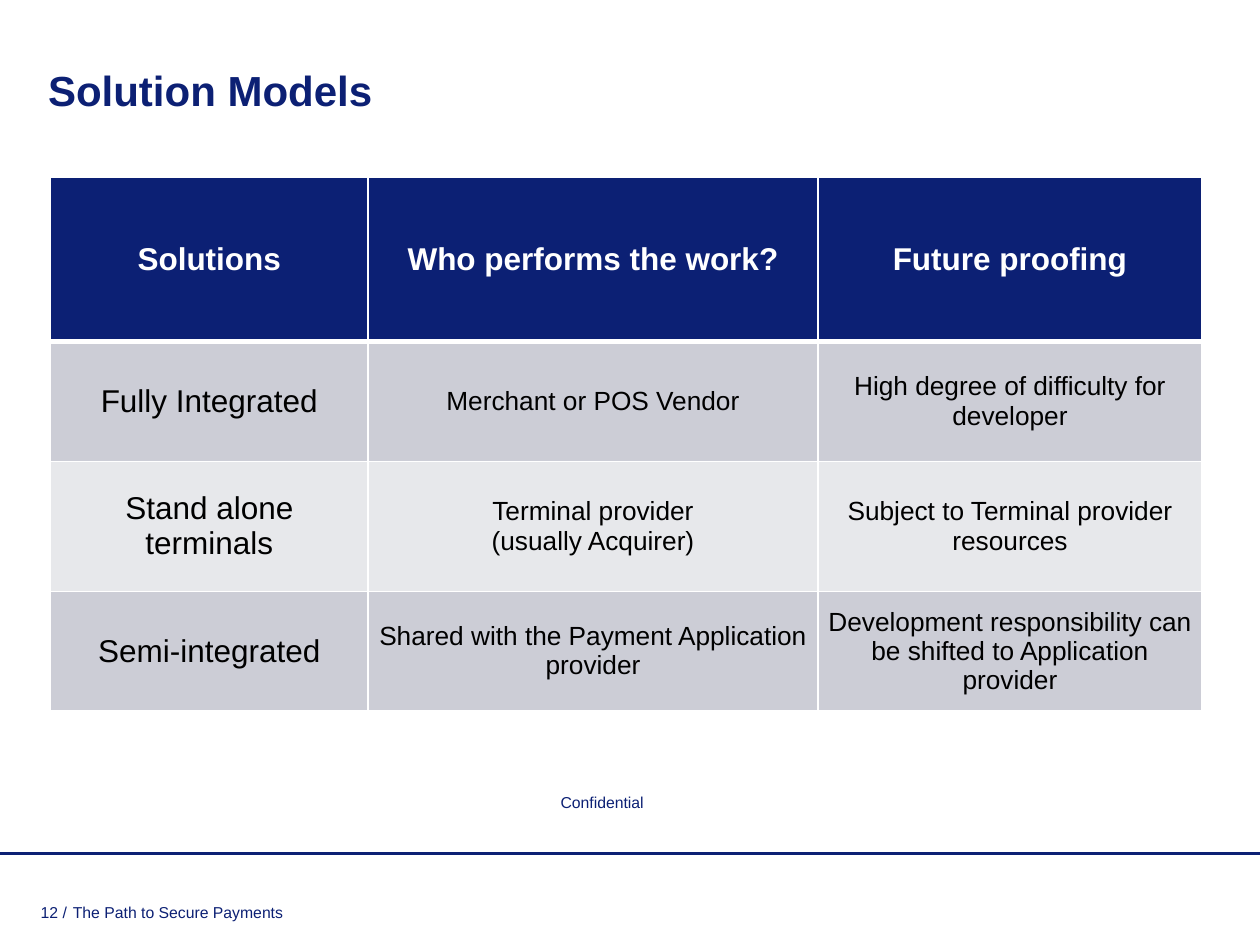
from lxml import etree
from pptx import Presentation
from pptx.dml.color import RGBColor
from pptx.enum.shapes import MSO_CONNECTOR
from pptx.enum.text import MSO_ANCHOR, PP_ALIGN
from pptx.oxml.ns import qn
from pptx.util import Cm, Pt

STRAIGHT = MSO_CONNECTOR.STRAIGHT
MIDDLE, BOTTOM = MSO_ANCHOR.MIDDLE, MSO_ANCHOR.BOTTOM
LEFT, CENTER, RIGHT = PP_ALIGN.LEFT, PP_ALIGN.CENTER, PP_ALIGN.RIGHT

COLORS = {"navy": "0C2074", "white": "FFFFFF", "black": "000000",
          "band_dark": "CCCDD6", "band_light": "E7E8EB"}


def style_text(frame, size, color, bold=False, align=LEFT):
    for paragraph in frame.paragraphs:
        paragraph.alignment = align
        paragraph.font.name = "Arial"
        paragraph.font.size = Pt(size)
        paragraph.font.bold = bold
        paragraph.font.color.rgb = RGBColor.from_string(COLORS[color])


def add_label(text, left, top, width, height, size, anchor=BOTTOM,
              wrap=True, bold=False, align=LEFT):
    frame = slide.shapes.add_textbox(Cm(left), Cm(top), Cm(width), Cm(height)).text_frame
    frame.margin_left = frame.margin_right = frame.margin_top = frame.margin_bottom = 0
    frame.word_wrap = wrap
    frame.vertical_anchor = anchor
    frame.text = text
    style_text(frame, size, "navy", bold, align)


prs = Presentation()
prs.slide_width, prs.slide_height = Cm(25.4), Cm(19.05)
slide = prs.slides.add_slide(prs.slide_layouts[6])

# Footer rule
footer_rule = slide.shapes.add_connector(STRAIGHT, 0, Cm(17.2), prs.slide_width, Cm(17.2))
footer_rule.line.color.rgb = RGBColor.from_string(COLORS["navy"])
footer_rule.line.width = Pt(1.5)
etree.SubElement(footer_rule._element.spPr, qn("a:effectLst"))

# Solutions table
solutions = [
    ["Solutions", "Who performs the work?", "Future proofing"],
    ["Fully Integrated", "Merchant or POS Vendor",
     "High degree of difficulty for developer"],
    ["Stand alone terminals", "Terminal provider\n(usually Acquirer)",
     "Subject to Terminal provider resources"],
    ["Semi-integrated", "Shared with the Payment Application provider",
     "Development responsibility can be shifted to Application provider"],
]
column_widths = [6.4, 9.07, 7.74]
row_heights = [3.3, 2.42, 2.62, 2.41]
row_fills = ["navy", "band_dark", "band_light", "band_dark"]

table = slide.shapes.add_table(len(row_heights), len(column_widths), Cm(1.02), Cm(3.58),
                               Cm(sum(column_widths)), Cm(sum(row_heights))).table
for column, width in zip(table.columns, column_widths):
    column.width = Cm(width)
for row, height in zip(table.rows, row_heights):
    row.height = Cm(height)

for r, row_texts in enumerate(solutions):
    header = r == 0
    for c, text in enumerate(row_texts):
        cell = table.cell(r, c)
        cell.text = text
        cell.vertical_anchor = MIDDLE
        cell.margin_left = cell.margin_right = Cm(0.13)
        cell.margin_top = cell.margin_bottom = Cm(0.1)
        style_text(cell.text_frame, 18 if header or c == 0 else 15,
                   "white" if header else "black", header, CENTER)

        # White borders, heavier between header and body
        cell_props = cell._tc.get_or_add_tcPr()
        for side in ("lnL", "lnR", "lnT", "lnB"):
            heavy = (r, side) in ((0, "lnB"), (1, "lnT"))
            border = etree.SubElement(cell_props, qn(f"a:{side}"), w=str(Pt(3 if heavy else 1)))
            border_fill = etree.SubElement(border, qn("a:solidFill"))
            etree.SubElement(border_fill, qn("a:srgbClr"), val=COLORS["white"])
        cell.fill.solid()
        cell.fill.fore_color.rgb = RGBColor.from_string(COLORS[row_fills[r]])

# Title
add_label("Solution Models", 0.97, 0.86, 23.19, 1.9, 24, anchor=MIDDLE, bold=True)

# Footer texts
add_label("Confidential", 11.3, 15.98, 1.7, 0.38, 9, wrap=False)
add_label("The Path to Secure Payments", 1.47, 18.21, 8.05, 0.38, 9)
add_label("12 /", 0.66, 18.21, 0.69, 0.38, 9, align=RIGHT)

prs.save("out.pptx")
